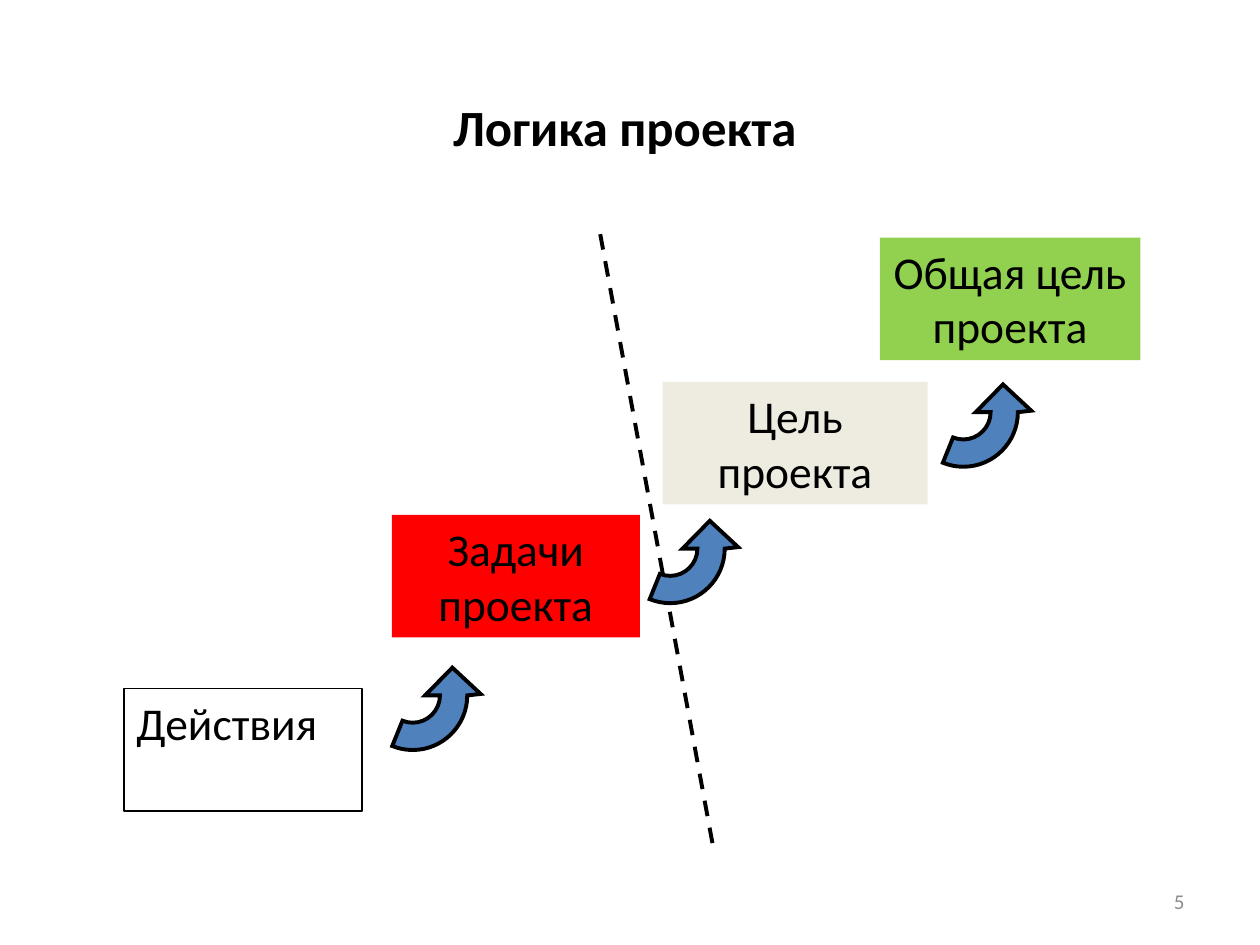
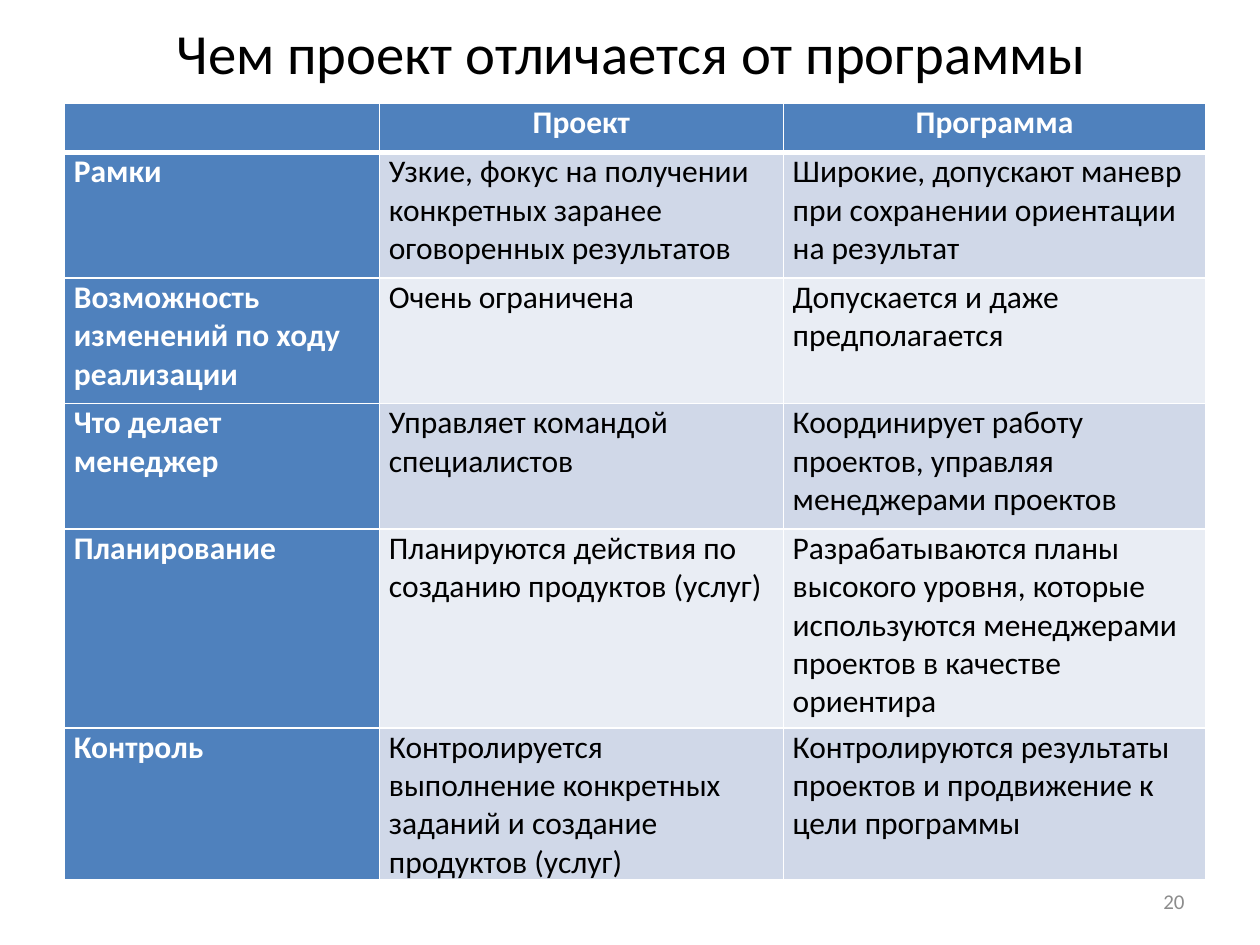
from dataclasses import dataclass
from math import cos, radians, sin, tan

from lxml.etree import SubElement
from pptx import Presentation
from pptx.dml.color import RGBColor
from pptx.enum.dml import MSO_LINE
from pptx.enum.shapes import MSO_CONNECTOR, MSO_SHAPE
from pptx.enum.text import MSO_ANCHOR, PP_ALIGN
from pptx.oxml.ns import qn
from pptx.util import Cm, Pt


@dataclass(frozen=True)
class Theme:
    font: str = "Calibri"
    black: str = "000000"
    white: str = "FFFFFF"
    gray: str = "8C8C8C"
    blue: str = "4F81BD"
    red: str = "FF0000"
    cream: str = "EEECE1"
    green: str = "92D050"
    bands: tuple = ("D0D8E8", "E9EDF4")
    head: float = 29
    title: float = 32.4
    step: float = 26
    cell: float = 18
    foot: float = 12
    thin: float = 0.75
    bold: float = 2.25
    rule: float = 1
    thick: float = 3


T = Theme()

LOGIC = "Логика проекта"
STEPS = [
    (("Задачи", "проекта"), (7.9, 10.38, 5, 2.47), T.red, True),
    (("Цель", "проекта"), (13.36, 7.7, 5.34, 2.47), T.cream, True),
    (("Общая цель", "проекта"), (17.74, 4.79, 5.25, 2.47), T.green, False),
]
FIRST = (("Действия",), (2.5, 13.88, 4.8, 2.47), None, True)
HUBS = [(8.32, 14.02), (13.51, 11.06), (19.42, 8.31)]
OUTER, INNER, SWEEP = 1.1, 0.55, 112
TIP = [(1.37, -0.03), (0.8, -0.56), (0.25, 0)]
SPLIT = (12.1, 4.72, 14.39, 17.15)

DIFFER = "Чем проект отличается от программы"
COLS = [6.35, 8.14, 8.52]
ROWS = [
    (1, ("", "Проект", "Программа")),
    (2.53, ("Рамки",
            "Узкие, фокус на получении конкретных заранее оговоренных результатов",
            "Широкие, допускают маневр при сохранении ориентации на результат")),
    (2.53, ("Возможность изменений по ходу реализации",
            "Очень ограничена",
            "Допускается и даже предполагается")),
    (2.53, ("Что делает менеджер",
            "Управляет командой специалистов",
            "Координирует работу проектов, управляя менеджерами проектов")),
    (4.01, ("Планирование",
            "Планируются действия по созданию продуктов (услуг)",
            "Разрабатываются планы высокого уровня, которые используются "
            "менеджерами проектов в качестве ориентира")),
    (2.53, ("Контроль",
            "Контролируется выполнение конкретных заданий и создание продуктов (услуг)",
            "Контролируются результаты проектов и продвижение к цели программы")),
]


def color(code):
    return RGBColor.from_string(code)


def paint(shape, fill, line, width):
    shape.shadow.inherit = False
    if fill:
        shape.fill.solid()
        shape.fill.fore_color.rgb = color(fill)
    else:
        shape.fill.background()
    if line:
        shape.line.color.rgb = color(line)
        shape.line.width = Pt(width)
    else:
        shape.line.fill.background()


def write(frame, lines, size, ink=T.black, bold=False, align=PP_ALIGN.CENTER):
    for i, line in enumerate(lines):
        para = frame.add_paragraph() if i else frame.paragraphs[0]
        para.text = line
        para.alignment = align
        para.font.name = T.font
        para.font.size = Pt(size)
        para.font.bold = bold
        para.font.color.rgb = color(ink)


def label(slide, text, box, size, **style):
    frame = slide.shapes.add_textbox(*map(Cm, box)).text_frame
    frame.word_wrap = True
    frame.vertical_anchor = MSO_ANCHOR.MIDDLE
    write(frame, [text], size, **style)


def page(deck, title, box, size, bold=False):
    slide = deck.slides.add_slide(deck.slide_layouts[6])
    label(slide, title, box, size, bold=bold)
    return slide


def number(slide, text):
    label(slide, text, (18.2, 17.66, 5.93, 1.01), T.foot,
          ink=T.gray, align=PP_ALIGN.RIGHT)


def step(slide, lines, box, fill, wrap):
    shape = slide.shapes.add_shape(MSO_SHAPE.RECTANGLE, *map(Cm, box))
    paint(shape, fill, None if fill else T.black, T.thin)
    frame = shape.text_frame
    frame.word_wrap = wrap
    frame.vertical_anchor = MSO_ANCHOR.TOP
    write(frame, lines, T.step, align=PP_ALIGN.CENTER if fill else PP_ALIGN.LEFT)


def curve(radius, start, end):
    a, b = radians(start), radians(end)
    pull = 4 / 3 * tan((b - a) / 4)
    spots = [(cos(a) - pull * sin(a), sin(a) + pull * cos(a)),
             (cos(b) + pull * sin(b), sin(b) - pull * cos(b)),
             (cos(b), sin(b))]
    return [(radius * x, radius * y) for x, y in spots]


def outline():
    end = radians(SWEEP)
    return [
        curve(INNER, 0, 90), curve(INNER, 90, SWEEP),
        [(OUTER * cos(end), OUTER * sin(end))],
        curve(OUTER, SWEEP, 90), curve(OUTER, 90, 0),
        *([spot] for spot in TIP),
    ]


def bend(shape, parts):
    lines = list(shape._element.iter(qn("a:lnTo")))
    for part in parts:
        group, lines = lines[:len(part)], lines[len(part):]
        if len(group) == 3:
            first = group[0]
            first.tag = qn("a:cubicBezTo")
            for line in group[1:]:
                first.append(line[0])
                line.getparent().remove(line)


def arrow(slide, hub):
    parts = outline()
    spots = [(INNER, 0)] + [spot for part in parts for spot in part]
    points = [(Cm(hub[0] + x), Cm(hub[1] + y)) for x, y in spots]
    pen = slide.shapes.build_freeform(*points[0])
    pen.add_line_segments(points[1:], close=True)
    shape = pen.convert_to_shape()
    bend(shape, parts)
    paint(shape, T.blue, T.black, T.bold)
    line = shape._element.spPr.find(qn("a:ln"))
    SubElement(line, qn("a:miter"), lim="800000")


def split(slide):
    line = slide.shapes.add_connector(MSO_CONNECTOR.STRAIGHT, *map(Cm, SPLIT))
    line.line.color.rgb = color(T.black)
    line.line.width = Pt(T.bold)
    line.line.dash_style = MSO_LINE.DASH
    SubElement(line._element.spPr, qn("a:effectLst"))


def border(cell, row):
    props = cell._tc.get_or_add_tcPr()
    heavy = {0: "B", 1: "T"}.get(row)
    for side in "LRTB":
        width = T.thick if side == heavy else T.rule
        line = SubElement(props, qn("a:ln" + side), w=str(Pt(width)))
        fill = SubElement(line, qn("a:solidFill"))
        SubElement(fill, qn("a:srgbClr"), val=T.white)


def fill_cell(cell, text, row, col):
    head = row == 0 or col == 0
    border(cell, row)
    cell.fill.solid()
    cell.fill.fore_color.rgb = color(T.blue if head else T.bands[(row - 1) % 2])
    cell.margin_left = cell.margin_right = Cm(0.19)
    cell.margin_top = cell.margin_bottom = 0
    if text:
        write(cell.text_frame, [text], T.cell, T.white if head else T.black, head,
              PP_ALIGN.LEFT if row else PP_ALIGN.CENTER)
        para = cell.text_frame.paragraphs[0]
        para.space_before = para.space_after = Pt(6)


def grid(slide):
    high = sum(height for height, _ in ROWS)
    table = slide.shapes.add_table(len(ROWS), len(COLS), Cm(1.3), Cm(2.08),
                                   Cm(sum(COLS)), Cm(high)).table
    for col, width in enumerate(COLS):
        table.columns[col].width = Cm(width)
    for row, (height, texts) in enumerate(ROWS):
        table.rows[row].height = Cm(height)
        for col, text in enumerate(texts):
            fill_cell(table.cell(row, col), text, row, col)


def main():
    deck = Presentation()
    deck.slide_width, deck.slide_height = Cm(25.4), Cm(19.05)

    logic = page(deck, LOGIC, (4.7, 0.96, 15.8, 3.18), T.head, bold=True)
    for item in STEPS:
        step(logic, *item)
    split(logic)
    for hub in HUBS:
        arrow(logic, hub)
    step(logic, *FIRST)
    number(logic, "5")

    differ = page(deck, DIFFER, (1.3, 0.36, 22.86, 1.37), T.title)
    grid(differ)
    number(differ, "20")
    deck.save("out.pptx")


if __name__ == "__main__":
    main()
